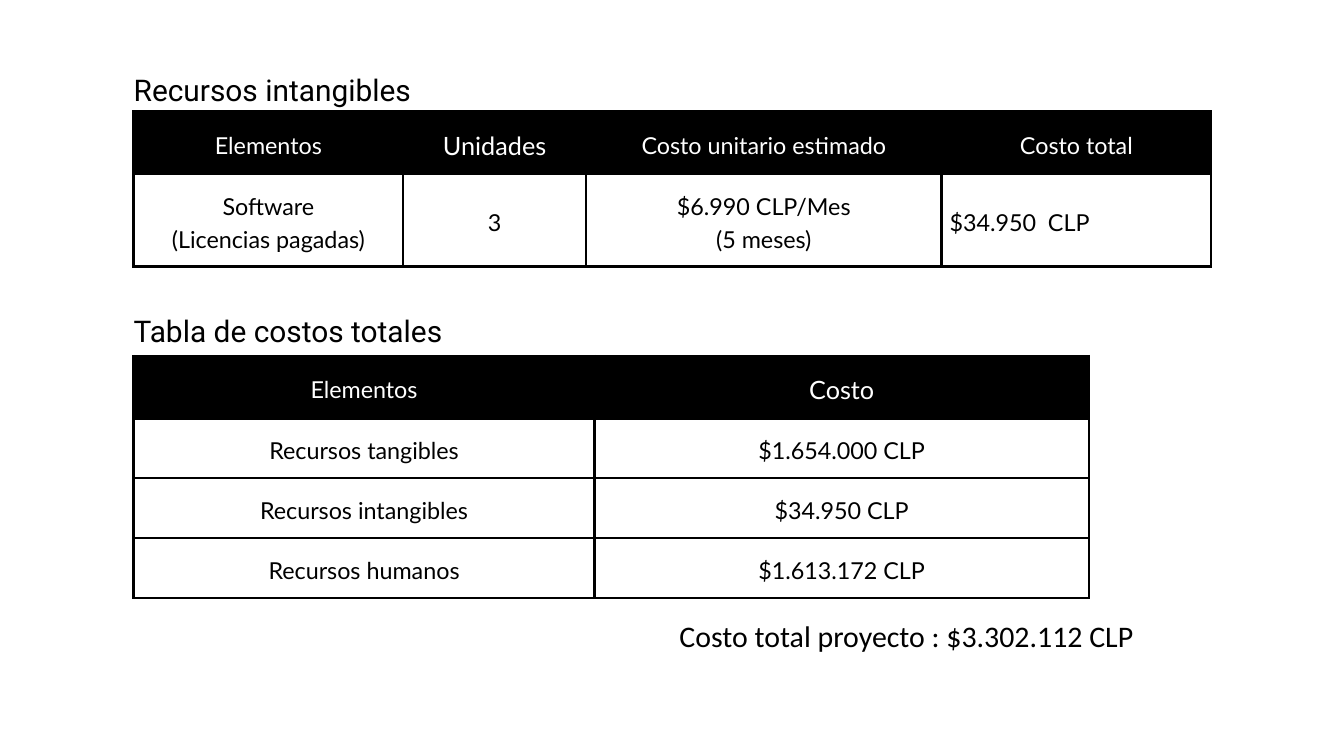
import pptx
import pptx.util
import pptx.oxml
from pptx.dml.color import RGBColor
from pptx.enum.text import MSO_ANCHOR, MSO_AUTO_SIZE, PP_ALIGN
from pptx.oxml.ns import qn
from pptx.util import Cm, Pt

# Content: each cell is a list of lines
HEAD = "Recursos intangibles"
SUB = "Tabla de costos totales"
TOTAL = "Costo total proyecto : $3.302.112 CLP"
ASSETS = [
    [["Elementos"], ["Unidades"], ["Costo unitario estimado"], ["Costo total"]],
    [["Software", "(Licencias pagadas)"], ["3"],
     ["$6.990 CLP/Mes", "(5 meses)"], ["$34.950  CLP"]],
]
COSTS = [
    [["Elementos"], ["Costo"]],
    [["Recursos tangibles"], ["$1.654.000 CLP"]],
    [["Recursos intangibles"], ["$34.950 CLP"]],
    [["Recursos humanos"], ["$1.613.172 CLP"]],
]

# Style
BLACK = RGBColor(0x00, 0x00, 0x00)
WHITE = RGBColor(0xFF, 0xFF, 0xFF)
LEFT = 5.05
PAD = Cm(0.3)
LEADING = 1.4
BORDER = 3


def add_run(para, text, size, font, color):
    para.line_spacing = Pt(round(size * LEADING, 1))
    run = para.add_run()
    run.text = text
    run.font.size = Pt(size)
    run.font.name = font
    run.font.color.rgb = color


def set_label(shape, text, left, top, width, font):
    shape.left, shape.top = Cm(left), Cm(top)
    shape.width, shape.height = Cm(width), Cm(1.5)
    frame = shape.text_frame
    frame.word_wrap = True
    frame.auto_size = MSO_AUTO_SIZE.NONE
    frame.vertical_anchor = MSO_ANCHOR.TOP
    frame.margin_left = frame.margin_right = 0
    frame.margin_top = frame.margin_bottom = 0
    para = frame.paragraphs[0]
    para.alignment = PP_ALIGN.LEFT
    add_run(para, text, 32, font, BLACK)


def add_label(slide, *args):
    set_label(slide.shapes.add_textbox(0, 0, 0, 0), *args)


def set_border(cell):
    props = cell._tc.get_or_add_tcPr()
    for side in ("a:lnL", "a:lnR", "a:lnT", "a:lnB"):
        line = pptx.oxml.xmlchemy.OxmlElement(side)
        line.set("w", str(Pt(BORDER)))
        fill = pptx.oxml.xmlchemy.OxmlElement("a:solidFill")
        color = pptx.oxml.xmlchemy.OxmlElement("a:srgbClr")
        color.set("val", str(BLACK))
        fill.append(color)
        line.append(fill)
        props.append(line)


def fill_cell(cell, lines, header, size, align):
    set_border(cell)
    if header:
        cell.fill.solid()
        cell.fill.fore_color.rgb = BLACK
    else:
        cell.fill.background()
    cell.vertical_anchor = MSO_ANCHOR.MIDDLE
    cell.margin_left = cell.margin_right = PAD
    cell.margin_top = cell.margin_bottom = PAD
    frame = cell.text_frame
    for i, text in enumerate(lines):
        para = frame.add_paragraph() if i else frame.paragraphs[0]
        para.alignment = align
        add_run(para, text, size, "Lato", WHITE if header else BLACK)


def add_grid(slide, data, top, widths, heights):
    table = slide.shapes.add_table(
        len(data), len(widths), Cm(LEFT), Cm(top),
        Cm(sum(widths)), Cm(sum(heights))).table
    table.horz_banding = False
    for col, width in zip(table.columns, widths):
        col.width = Cm(width)
    for row, height in zip(table.rows, heights):
        row.height = Cm(height)
    for r, row in enumerate(data):
        for c, lines in enumerate(row):
            # The second heading is larger; the fourth column's value is at left
            size = 27 if (r, c) == (0, 1) else 25
            align = PP_ALIGN.LEFT if r and c == 3 else PP_ALIGN.CENTER
            fill_cell(table.cell(r, c), lines, r == 0, size, align)


def main():
    deck = pptx.Presentation()
    deck.slide_width, deck.slide_height = Cm(50.8), Cm(28.58)
    slide = deck.slides.add_slide(deck.slide_layouts[5])

    # Intangible resources
    set_label(slide.shapes.title, HEAD, LEFT, 2.49, 12.3, "Roboto")
    add_grid(slide, ASSETS, 4.22, [10.19, 6.91, 13.44, 10.19], [2.36, 3.5])

    # Total costs
    add_label(slide, SUB, LEFT, 11.61, 12.3, "Roboto")
    add_grid(slide, COSTS, 13.46, [17.42, 18.69], [2.36] + [2.26] * 3)
    add_label(slide, TOTAL, 25.68, 23.11, 19.46, "Calibri")

    deck.save("out.pptx")


if __name__ == "__main__":
    main()
